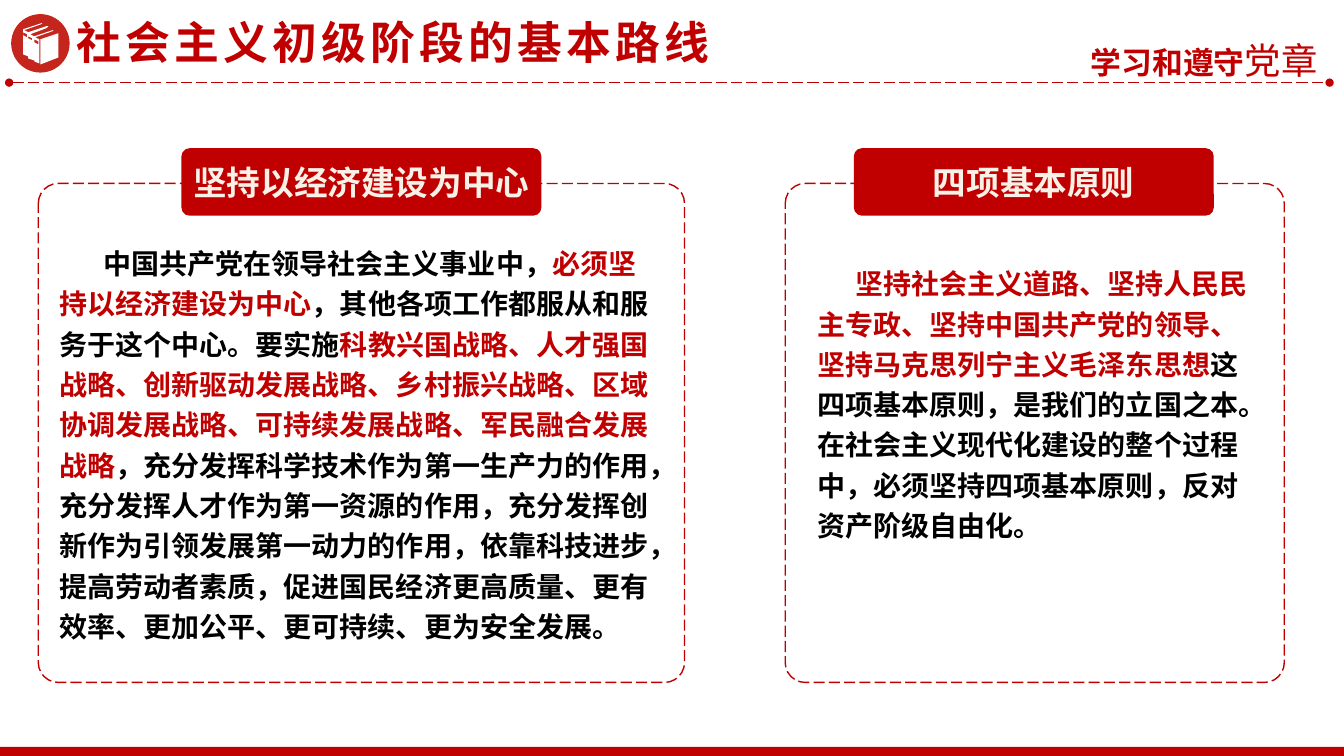
"""Build the slide on the basic line, with lengths as percent of the slide."""
from dataclasses import dataclass

import pptx
import pptx.dml.color
import pptx.enum.dml
import pptx.enum.shapes
import pptx.enum.text
import pptx.oxml
import pptx.oxml.ns
import pptx.util
from pptx.oxml.ns import qn

WIDE = pptx.util.Inches(13.33)
HIGH = pptx.util.Inches(7.5)
RED, BLACK, CREAM, WHITE = "C00000", "000000", "F8F1E7", "FFFFFF"
SERIF, SANS = "Times New Roman", "Noto Sans CJK SC"
KIND = pptx.enum.shapes.MSO_SHAPE
ALIGN = pptx.enum.text.PP_ALIGN


@dataclass
class Box:
    """Hold a place in percent of the slide's width and height."""
    left: float
    top: float
    width: float
    height: float

    def place(self) -> tuple[int, int, int, int]:
        """Give the place in slide units."""
        return (across(self.left), down(self.top),
                across(self.width), down(self.height))


@dataclass
class Run:
    """Hold a stretch of text in one colour."""
    text: str
    tint: str = RED
    size: float = 20
    bold: bool = True


@dataclass
class Panel:
    """Hold one framed panel with its label and body."""
    title: str
    frame: Box
    label: Box
    body: Box
    indent: float
    runs: list[Run]


PANELS = [
    Panel("坚持以经济建设为中心", Box(2.85, 24.27, 48.08, 66),
          Box(13.5, 19.6, 26.78, 8.93), Box(3.68, 31.07, 46.43, 55.2), 3.27, [
        Run("中国共产党在领导社会主义事业中，", BLACK),
        Run("必须坚持以经济建设为中心"),
        Run("，其他各项工作都服从和服务于这个中心。要实施", BLACK),
        Run("科教兴国战略、人才强国战略、创新驱动发展战略、乡村振兴战略、"
            "区域协调发展战略、可持续发展战略、军民融合发展战略"),
        Run("，充分发挥科学技术作为第一生产力的作用，充分发挥人才作为第一资源的作用，"
            "充分发挥创新作为引领发展第一动力的作用，依靠科技进步，提高劳动者素质，"
            "促进国民经济更高质量、更有效率、更加公平、更可持续、更为安全发展。", BLACK),
    ]),
    Panel("四项基本原则", Box(58.43, 24.27, 37.13, 66),
          Box(63.53, 19.6, 26.78, 8.93), Box(60.08, 33.73, 33.75, 39.07), 2.8, [
        Run("坚持社会主义道路、坚持人民民主专政、坚持中国共产党的领导、"
            "坚持马克思列宁主义毛泽东思想"),
        Run("这四项基本原则，是我们的立国之本。在社会主义现代化建设的整个过程中，"
            "必须坚持四项基本原则，反对资产阶级自由化。", BLACK),
    ]),
]
SPINE = [(42, 23), (41, 23), (23, 29), (23, 54), (28, 56), (28, 32), (24, 30), (41, 24)]
TAG = [(27, 34), (27, 37), (23, 35), (23, 32)]
COVER = [(40, 39), (40, 64), (58, 57), (58, 33)]


def across(share: float) -> int:
    """Turn a percent of the width into a length."""
    return round(WIDE * share / 100)


def down(share: float) -> int:
    """Turn a percent of the height into a length."""
    return round(HIGH * share / 100)


def hue(code: str) -> pptx.dml.color.RGBColor:
    """Turn a hex string into a colour."""
    return pptx.dml.color.RGBColor.from_string(code)


def paint(shape, fill: str) -> None:
    """Give a shape a flat fill and no line or shadow."""
    shape.shadow.inherit = False
    shape.fill.solid()
    shape.fill.fore_color.rgb = hue(fill)
    shape.line.fill.background()


def dash(line) -> None:
    """Make a line red and dashed."""
    line.color.rgb = hue(RED)
    line.width = pptx.util.Pt(1)
    line.dash_style = pptx.enum.dml.MSO_LINE.LONG_DASH


def block(shapes, kind, box: Box, fill: str = "", curve: float = 0):
    """Draw a preset shape, filled or with a dashed line."""
    shape = shapes.add_shape(kind, *box.place())
    if fill:
        paint(shape, fill)
    else:
        shape.shadow.inherit = False
        shape.fill.background()
        dash(shape.line)
    if curve:
        shape.adjustments[0] = curve
    return shape


def write(shape, runs: list[Run], face: str, align=ALIGN.LEFT,
          wrap: bool = False, space: float = 0):
    """Write runs into the first paragraph of a shape."""
    shape.text_frame.word_wrap = wrap
    para = shape.text_frame.paragraphs[0]
    para.alignment = align
    para.font.name = face
    for part in runs:
        run = para.add_run()
        run.text = part.text
        run.font.name = face
        run.font.size = pptx.util.Pt(part.size)
        run.font.bold = part.bold
        run.font.color.rgb = hue(part.tint)
        props = run.font._element
        pptx.oxml.ns.nsdecls("a")
        east = props.makeelement(qn("a:ea"), {"typeface": SANS})
        props.find(qn("a:latin")).addnext(east)
        if space:
            props.set("spc", str(round(space * 100)))
    return para


def note(shapes, box: Box, runs: list[Run], face: str, **style):
    """Add a text box that grows with its text."""
    shape = shapes.add_textbox(*box.place())
    shape.text_frame.auto_size = pptx.enum.text.MSO_AUTO_SIZE.SHAPE_TO_FIT_TEXT
    return write(shape, runs, face, **style)


def rule(shapes) -> None:
    """Draw the dashed rule with a dot at each end."""
    line = shapes.add_connector(pptx.enum.shapes.MSO_CONNECTOR.STRAIGHT,
                                across(0.68), down(10.93), across(98.93), down(10.93))
    dash(line.line)
    stroke = line.line._get_or_add_ln()
    for end in ("a:headEnd", "a:tailEnd"):
        stroke.append(stroke.makeelement(qn(end), {"type": "oval"}))
    props = stroke.getparent()
    props.append(props.makeelement(qn("a:effectLst"), {}))


def books(shapes) -> None:
    """Draw the three books on their disc."""
    block(shapes, KIND.OVAL, Box(0.83, 1.87, 4.35, 7.73), "C4261D")
    loops = [COVER] + [[(x + 5.5 * step, y + 3.5 * step) for x, y in loop]
                       for step in range(3) for loop in (SPINE, TAG)]
    pen = shapes.build_freeform(*COVER[0], scale=HIGH / 750)
    for loop in loops:
        pen.move_to(*loop[0])
        pen.add_line_segments(loop[1:], close=True)
    paint(pen.convert_to_shape(), WHITE)


def panel(shapes, item: Panel) -> None:
    """Draw a panel: body text, dashed frame and label."""
    para = note(shapes, item.body, item.runs, SERIF, wrap=True)
    para.line_spacing = 1.2
    para._p.get_or_add_pPr().set("indent", str(across(item.indent)))
    block(shapes, KIND.ROUNDED_RECTANGLE, item.frame, curve=0.04)
    label = block(shapes, KIND.ROUNDED_RECTANGLE, item.label, RED, 0.12)
    write(label, [Run(item.title, CREAM, 24)], SERIF, ALIGN.CENTER)


def main() -> None:
    """Build and save the slide."""
    deck = pptx.Presentation()
    deck.slide_width, deck.slide_height = WIDE, HIGH
    shapes = deck.slides.add_slide(deck.slide_layouts[6]).shapes
    rule(shapes)
    note(shapes, Box(79.5, 4.4, 19.28, 7.2),
         [Run("学习和遵守", size=22), Run("党章", size=26, bold=False)],
         SANS, align=ALIGN.RIGHT)
    books(shapes)
    block(shapes, KIND.RECTANGLE, Box(0, 98.8, 100, 1.2), RED)
    note(shapes, Box(4.95, 1.33, 49.35, 8.53),
         [Run("社会主义初级阶段的基本路线", size=32)], SERIF, space=3)
    for item in PANELS:
        panel(shapes, item)
    deck.save("out.pptx")


if __name__ == "__main__":
    main()
